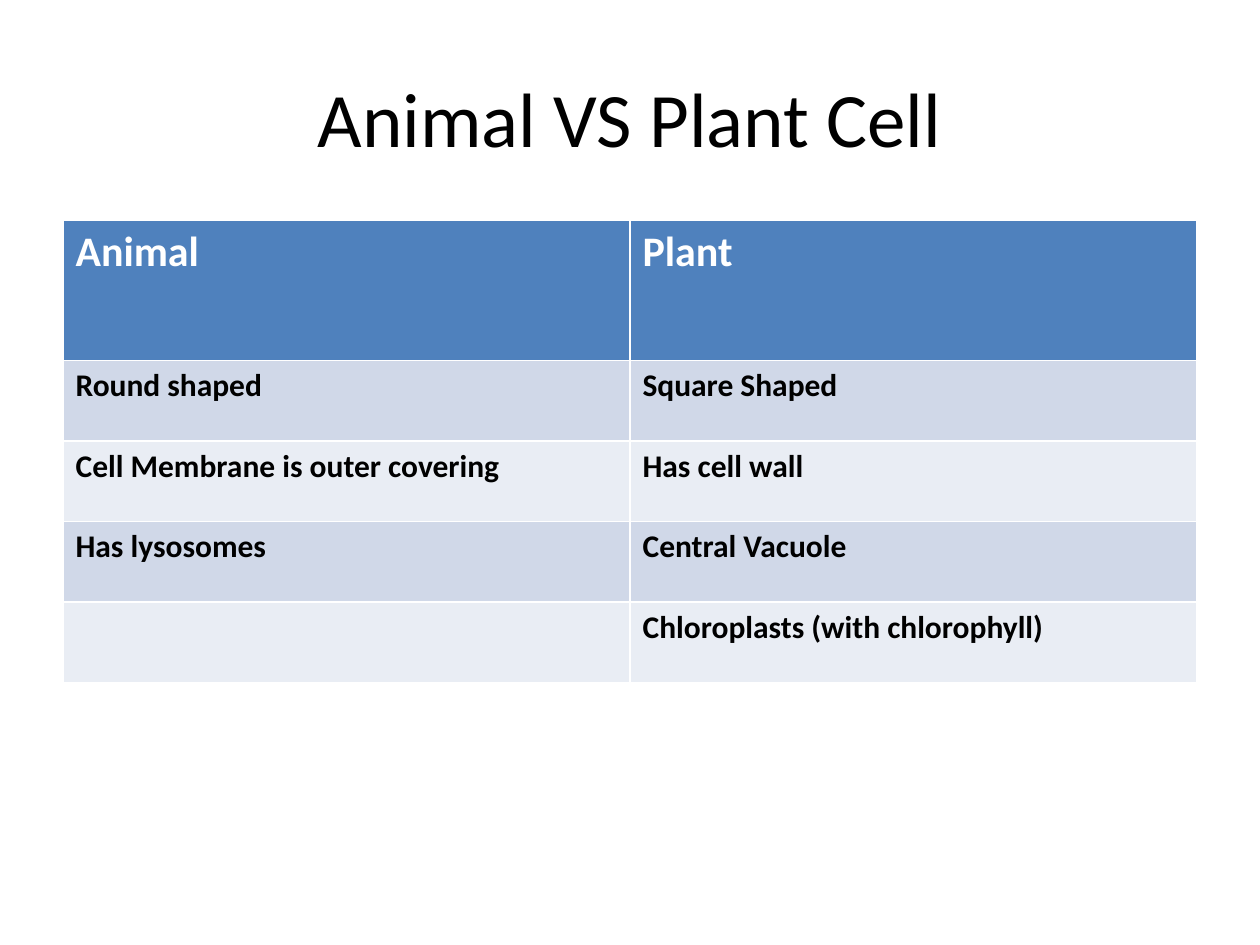
from pptx import Presentation
from pptx.dml.color import RGBColor
from pptx.enum.text import MSO_ANCHOR, PP_ALIGN
from pptx.util import Inches, Pt

CENTER = PP_ALIGN.CENTER
MIDDLE = MSO_ANCHOR.MIDDLE

BLACK = RGBColor(0x00, 0x00, 0x00)
WHITE = RGBColor(0xFF, 0xFF, 0xFF)
BLUE = RGBColor(0x4F, 0x81, 0xBD)
BANDS = [RGBColor(0xD0, 0xD8, 0xE8), RGBColor(0xE9, 0xED, 0xF4)]

TITLE = "Animal VS Plant Cell"
COMPARISON = [
    ("Animal", "Plant"),
    ("Round shaped", "Square Shaped"),
    ("Cell Membrane is outer covering", "Has cell wall"),
    ("Has lysosomes", "Central Vacuole"),
    ("", "Chloroplasts (with chlorophyll)"),
]

TITLE_FORMAT = {"name": "Calibri", "size": Pt(44), "bold": False}
HEADER_FORMAT = {"name": "Calibri", "size": Pt(24), "bold": True}
BODY_FORMAT = {"name": "Calibri", "size": Pt(18), "bold": True}

WIDTH, HEIGHT = Inches(10), Inches(7.5)
MARGIN = Inches(0.5)
CONTENT_WIDTH = WIDTH - 2 * MARGIN
TITLE_TOP, TITLE_HEIGHT = Inches(0.3), Inches(1.25)
TABLE_TOP = Inches(1.75)
HEADER_HEIGHT, BODY_HEIGHT = Inches(1.11), Inches(0.64)


def format_font(font, values, color):
    for name, value in values.items():
        setattr(font, name, value)
    font.color.rgb = color


def add_title(page):
    title = page.shapes.title
    title.left, title.top = MARGIN, TITLE_TOP
    title.width, title.height = CONTENT_WIDTH, TITLE_HEIGHT
    title.text_frame.text = TITLE
    title.text_frame.vertical_anchor = MIDDLE
    para = title.text_frame.paragraphs[0]
    para.alignment = CENTER
    format_font(para.font, TITLE_FORMAT, BLACK)


def add_comparison(page):
    heights = [HEADER_HEIGHT] + [BODY_HEIGHT] * (len(COMPARISON) - 1)
    table = page.shapes.add_table(
        len(COMPARISON), len(COMPARISON[0]),
        MARGIN, TABLE_TOP, CONTENT_WIDTH, sum(heights),
    ).table
    for index, (texts, height) in enumerate(zip(COMPARISON, heights)):
        table.rows[index].height = height
        is_header = index == 0
        fill = BLUE if is_header else BANDS[(index - 1) % len(BANDS)]
        values = HEADER_FORMAT if is_header else BODY_FORMAT
        color = WHITE if is_header else BLACK
        for cell, text in zip(table.rows[index].cells, texts):
            cell.text = text
            cell.fill.solid()
            cell.fill.fore_color.rgb = fill
            format_font(cell.text_frame.paragraphs[0].font, values, color)


def main():
    deck = Presentation()
    deck.slide_width, deck.slide_height = WIDTH, HEIGHT
    page = deck.slides.add_slide(deck.slide_layouts.get_by_name("Title Only"))
    add_title(page)
    add_comparison(page)
    deck.save("out.pptx")


if __name__ == "__main__":
    main()
